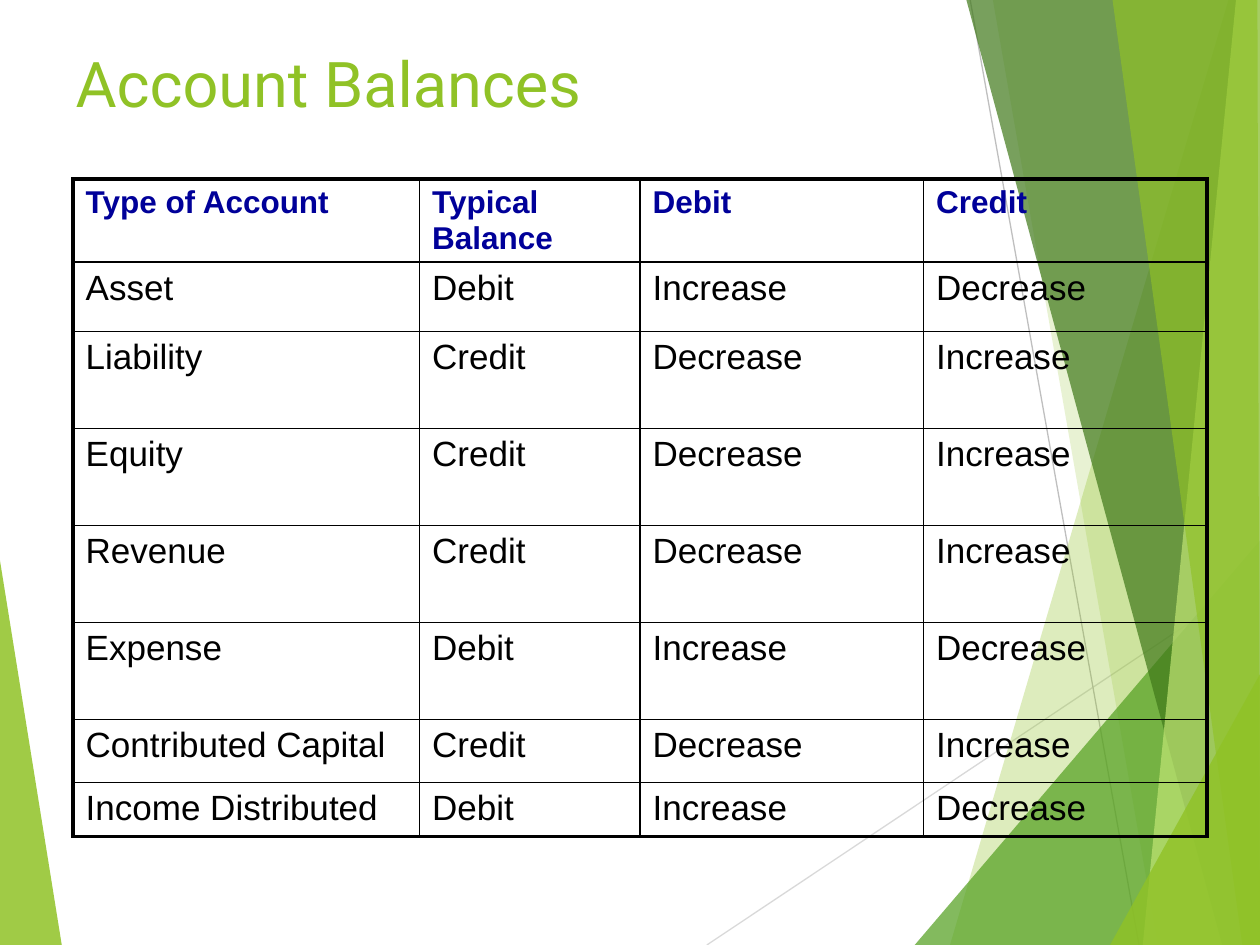
from lxml import etree
from pptx import Presentation
from pptx.dml.color import RGBColor
from pptx.enum.text import MSO_ANCHOR, PP_ALIGN
from pptx.oxml.ns import qn
from pptx.util import Inches, Pt

TOP, LEFT = MSO_ANCHOR.TOP, PP_ALIGN.LEFT
TITLE_ONLY = 5

TITLE = "Account Balances"
HEADER = ("Type of Account", "Typical Balance", "Debit", "Credit")
# account, side of its typical balance
ACCOUNTS = [
    ("Asset", "Debit"),
    ("Liability", "Credit"),
    ("Equity", "Credit"),
    ("Revenue", "Credit"),
    ("Expense", "Debit"),
    ("Contributed Capital", "Credit"),
    ("Income Distributed", "Debit"),
]
COLUMN_WIDTHS = (2.75, 1.75, 2.25, 2.25)
ROW_HEIGHTS = (0.66, 0.55, 0.77, 0.77, 0.77, 0.77, 0.5, 0.43)
THIN, THICK = 1, 2.25

# from, to, colour
RAYS = [
    ((5.61, 7.5), (10, 4.57), "D9D9D9"),
    ((7.7, 0), (9.04, 7.5), "BFBFBF"),
]
# corners, colour, opacity in percent
LEFT_FACET = ([(0, 4.45), (0.49, 7.5), (0, 7.5)], "90C226", 85)
RIGHT_FACETS = [
    ([(9.75, 0), (7.54, 7.5), (10, 7.5), (10, 0)], "90C226", 30),
    ([(7.88, 0), (9.19, 7.5), (10, 7.5), (10, 0)], "90C226", 20),
    ([(7.26, 7.5), (10, 4.29), (10, 7.5)], "54A021", 72),
    ([(7.67, 0), (9.7, 7.5), (10, 7.5), (10, 0)], "3F7819", 70),
    ([(9.81, 0), (9.07, 7.5), (10, 7.5), (10, 0)], "C0E474", 70),
    ([(8.83, 0), (9.86, 7.5), (10, 7.5), (9.98, 0)], "90C226", 65),
    ([(8.81, 7.5), (10, 5.35), (10, 7.5)], "90C226", 80),
]


def rgb(code):
    return RGBColor.from_string(code)


def add_facet(group, corners, color, opacity):
    points = [(Inches(x), Inches(y)) for x, y in corners]
    builder = group.shapes.build_freeform(*points[0])
    builder.add_line_segments(points[1:], close=True)
    facet = builder.convert_to_shape()
    facet.shadow.inherit = False
    facet.line.fill.background()
    facet.fill.solid()
    facet.fill.fore_color.rgb = rgb(color)
    solid = facet._element.spPr.find(qn("a:solidFill"))
    etree.SubElement(solid[0], qn("a:alpha"), val=str(opacity * 1000))


def add_ray(group, start, end, color):
    ends = [Inches(value) for value in (*start, *end)]
    ray = group.shapes.add_connector(1, *ends)
    ray.line.color.rgb = rgb(color)
    ray.line.width = Pt(0.75)
    etree.SubElement(ray._element.spPr, qn("a:effectLst"))


def write(frame, text, font_name, size, color, bold=False):
    paragraph = frame.paragraphs[0]
    paragraph.alignment = LEFT
    run = paragraph.add_run()
    run.text = text
    font = run.font
    font.name, font.size, font.bold = font_name, Pt(size), bold
    font.color.rgb = rgb(color)


def set_borders(cell, widths):
    """Draw black cell borders; widths maps L, R, T and B to points."""
    properties = cell._tc.get_or_add_tcPr()
    for index, (side, width) in enumerate(widths.items()):
        border = etree.Element(qn(f"a:ln{side}"), w=str(Pt(width)))
        fill = etree.SubElement(border, qn("a:solidFill"))
        etree.SubElement(fill, qn("a:srgbClr"), val="000000")
        properties.insert(index, border)


def add_balances(slide):
    effects = {"Debit": ("Increase", "Decrease"), "Credit": ("Decrease", "Increase")}
    rows = [HEADER] + [(name, side, *effects[side]) for name, side in ACCOUNTS]
    last_row, last_column = len(rows) - 1, len(HEADER) - 1
    table = slide.shapes.add_table(
        len(rows), len(HEADER), Inches(0.58), Inches(1.42),
        Inches(sum(COLUMN_WIDTHS)), Inches(sum(ROW_HEIGHTS))).table
    table.horz_banding = False
    for column, width in zip(table.columns, COLUMN_WIDTHS):
        column.width = Inches(width)
    for row, height in zip(table.rows, ROW_HEIGHTS):
        row.height = Inches(height)
    for r, row in enumerate(rows):
        style = ("Arial", 20, "000000") if r else ("Arial", 18, "000099", True)
        for c, text in enumerate(row):
            cell = table.cell(r, c)
            cell.fill.background()
            cell.vertical_anchor = TOP
            write(cell.text_frame, text, *style)
            set_borders(cell, {
                "L": THICK if c == 0 else THIN,
                "R": THICK if c == last_column else THIN,
                "T": THICK if r == 0 else THIN,
                "B": THICK if r == last_row else THIN,
            })


def main():
    deck = Presentation()
    deck.slide_width, deck.slide_height = Inches(10), Inches(7.5)
    slide = deck.slides.add_slide(deck.slide_layouts[TITLE_ONLY])

    backdrop = slide.shapes.add_group_shape()
    add_facet(backdrop, *LEFT_FACET)
    for ray in RAYS:
        add_ray(backdrop, *ray)
    for facet in RIGHT_FACETS:
        add_facet(backdrop, *facet)

    title = slide.shapes.title
    backdrop._element.addnext(title._element)  # title in front of the backdrop
    title.left, title.top = Inches(0.5), Inches(0.3)
    title.width, title.height = Inches(9), Inches(1.25)
    title.text_frame.vertical_anchor = TOP
    write(title.text_frame, TITLE, "Roboto", 36, "90C226")

    add_balances(slide)
    deck.save("out.pptx")


if __name__ == "__main__":
    main()
